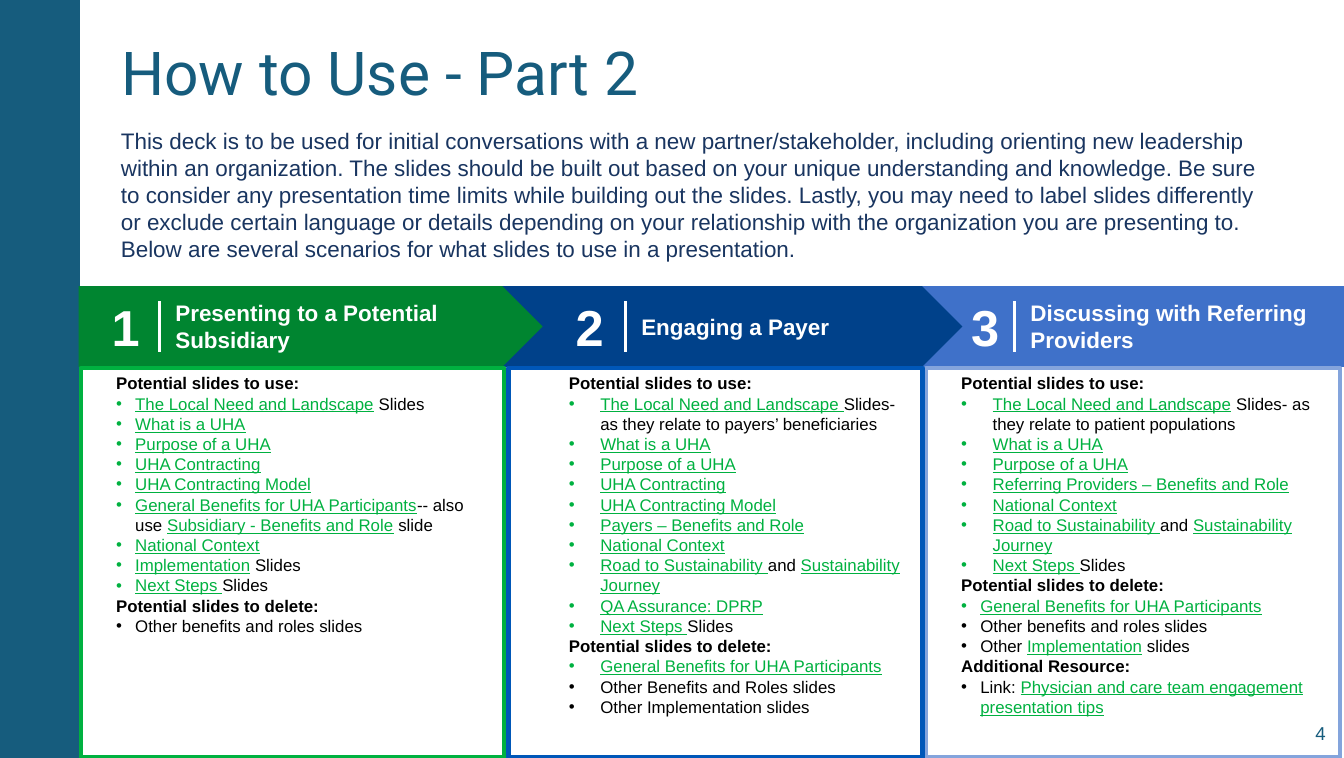
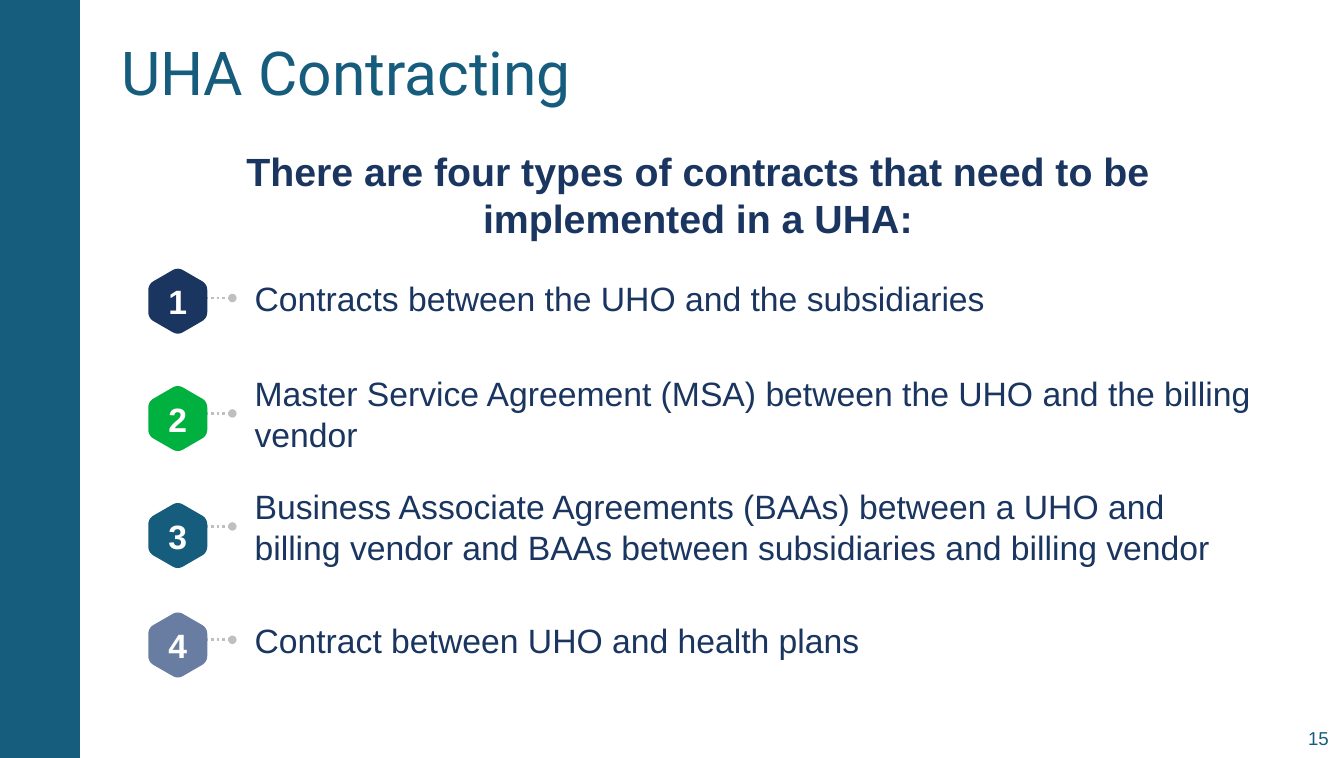
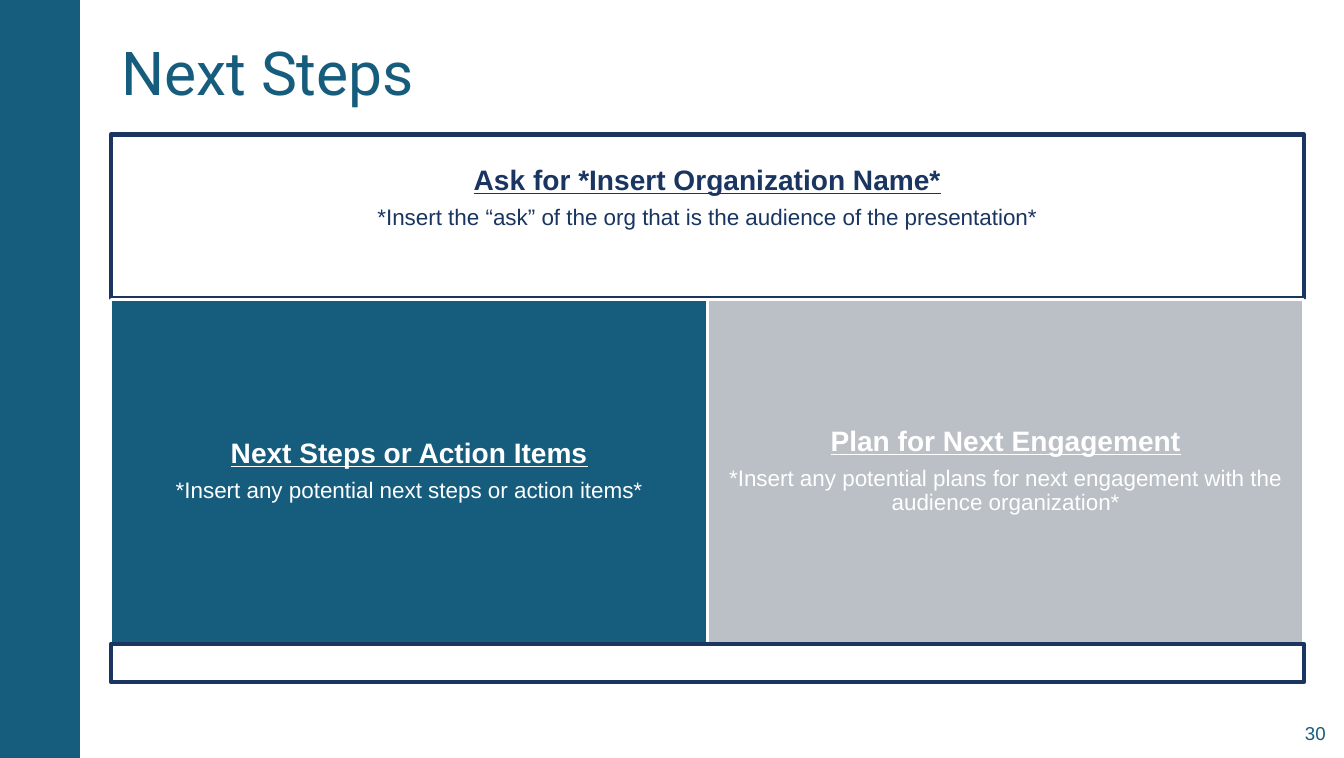
"""Build three slides of a partner briefing deck."""
import math
from dataclasses import dataclass

import pptx
import pptx.dml.color
import pptx.enum.dml
import pptx.enum.shapes
import pptx.enum.text
import pptx.oxml.ns
import pptx.util
from lxml import etree

Cm, Pt = pptx.util.Cm, pptx.util.Pt
Align = pptx.enum.text.PP_ALIGN
Anchor = pptx.enum.text.MSO_ANCHOR
Shape = pptx.enum.shapes.MSO_SHAPE
qn = pptx.oxml.ns.qn


@dataclass(frozen=True)
class Theme:
    font: str = "Arial"
    display: str = "Roboto"
    teal: str = "165C7D"
    navy: str = "193560"
    green: str = "00B140"
    forest: str = "008530"
    blue: str = "0057B8"
    deep: str = "00418A"
    sky: str = "3F71C9"
    pale: str = "84A4DC"
    slate: str = "687DA1"
    mist: str = "BAC0C5"
    dot: str = "BFBFBF"
    white: str = "FFFFFF"
    black: str = "000000"
    title: float = 43.1
    digit: int = 36
    lead: int = 28
    item: int = 24
    head: int = 20
    body: int = 16
    page: float = 13.3
    small: int = 12


T = Theme()


def rgb(code):
    return pptx.dml.color.RGBColor.from_string(code)


def put(thing, **values):
    for name, value in values.items():
        setattr(thing, name, value)


class Deck:
    def __init__(self):
        self.prs = pptx.Presentation()
        put(self.prs, slide_width=Cm(33.78), slide_height=Cm(19.05))
        self.layout = self.prs.slide_layouts[5]
        self.slide = None

    def start(self, title, page, left=30.45, top=17.91):
        first = self.slide is None
        self.slide = self.prs.slides.add_slide(self.layout)
        if first:
            band = self.shape(Shape.RECTANGLE, (0, 0, 2.01, 19.05), T.teal)
            self.layout.shapes.element.insert(2, band.element)
        head = self.slide.shapes.title
        put(head, left=Cm(2.79), top=Cm(0.71), width=Cm(29.29), height=Cm(2.16))
        put(head.text_frame, vertical_anchor=Anchor.MIDDLE,
            auto_size=pptx.enum.text.MSO_AUTO_SIZE.NONE)
        self.line(head, title, T.title, T.teal, name=T.display)
        self.text((left, top, 3.12, 1.02), page, T.page, T.teal, Align.RIGHT)

    def style(self, shape, fill=None, edge=None, width=3):
        shape.shadow.inherit = False
        if fill:
            shape.fill.solid()
            shape.fill.fore_color.rgb = rgb(fill)
        else:
            shape.fill.background()
        if edge:
            shape.line.color.rgb = rgb(edge)
            shape.line.width = Pt(width)
        else:
            shape.line.fill.background()
        return shape

    def shape(self, kind, at, fill=None, edge=None, width=3):
        made = self.slide.shapes.add_shape(kind, *map(Cm, at))
        return self.style(made, fill, edge, width)

    def frame(self, box, anchor=Anchor.MIDDLE, pad=None, foot=None):
        put(box.text_frame, word_wrap=True, vertical_anchor=anchor)
        if pad is not None:
            for side in ("left", "top", "right", "bottom"):
                setattr(box.text_frame, "margin_" + side, Cm(pad))
        if foot is not None:
            box.text_frame.margin_bottom = Cm(foot)
        return box

    def line(self, box, text, size, ink, align=Align.LEFT, space=None, **look):
        """Add a paragraph, with the parts between underscores as links."""
        para = box.text_frame.paragraphs[0]
        if para.runs:
            para = box.text_frame.add_paragraph()
        put(para, alignment=align, **(space or {}))
        for place, part in enumerate(text.split("_")):
            if not part:
                continue
            font = para.add_run()
            font.text = part
            font = font.font
            link = place % 2 == 1
            values = {"name": T.font, "size": Pt(size), "bold": False, "underline": link}
            put(font, **{**values, **look})
            font.color.rgb = rgb(T.green if link else ink)
        return para

    def text(self, at, text, size, ink, align=Align.LEFT,
             anchor=Anchor.MIDDLE, pad=None, **look):
        box = self.slide.shapes.add_textbox(*map(Cm, at))
        self.frame(box, anchor, pad)
        self.line(box, text, size, ink, align, **look)

    def indent(self, para, left, hang=0):
        props = para._p.get_or_add_pPr()
        props.set("marL", str(Cm(left + hang)))
        props.set("indent", str(-Cm(hang)))
        if hang:
            font = etree.SubElement(props, qn("a:buFont"))
            font.set("typeface", T.font)
            etree.SubElement(props, qn("a:buChar")).set("char", "•")

    def rule(self, start, end, ink, width, dots=False):
        kind = pptx.enum.shapes.MSO_CONNECTOR.STRAIGHT
        rule = self.slide.shapes.add_connector(kind, *map(Cm, start + end))
        rule.line.color.rgb = rgb(ink)
        rule.line.width = Pt(width)
        if dots:
            rule.line.dash_style = pptx.enum.dml.MSO_LINE.ROUND_DOT
            tail = etree.SubElement(rule.line._get_or_add_ln(), qn("a:tailEnd"))
            tail.set("type", "oval")
        etree.SubElement(rule.element.spPr, qn("a:effectLst"))

    def hexa(self, mid, high, digit, fill, reach=0.74, bend=0.25):
        """Draw a hexagon with round corners around a digit."""
        arm = (reach - bend) / math.cos(math.radians(30))
        dots = []
        for corner in range(-90, 270, 60):
            a = math.radians(corner)
            for turn in range(-30, 31, 10):
                b = math.radians(corner + turn)
                dots.append((Cm(mid + arm * math.cos(a) + bend * math.cos(b)),
                             Cm(high + arm * math.sin(a) + bend * math.sin(b))))
        form = self.slide.shapes.build_freeform(*dots[0])
        form.add_line_segments(dots[1:], close=True)
        made = self.frame(self.style(form.convert_to_shape(), fill), pad=0)
        self.line(made, digit, T.item, T.white, Align.CENTER, bold=True)

    def banner(self, kind, digit, label, fill, left, width, num, bar):
        top, high = 7.19, 2.03
        self.shape(kind, (left, top, width, high), fill)
        self.text((num, top, 1.5, high), digit, T.digit, T.white, Align.CENTER, bold=True)
        self.text((bar + 0.15, top, 8.1, high), label, T.body, T.white, bold=True)
        self.rule((bar, 7.57), (bar, 8.84), T.white, 2.25)

    def column(self, left, width, edge, inset, parts):
        box = self.shape(Shape.RECTANGLE, (left, 9.25, width, 9.79), edge=edge)
        self.frame(box, Anchor.TOP)
        for head, hang, lines in parts:
            self.indent(self.line(box, head, T.small, T.black, bold=True), inset)
            for text in lines:
                self.indent(self.line(box, text, T.small, T.black), inset, hang)

    def panel(self, at, head, text, ink, fill, edge, width, foot=0.2):
        box = self.shape(Shape.RECTANGLE, at, fill, edge, width)
        self.frame(box, pad=0.2, foot=foot)
        gap = {"line_spacing": 0.9, "space_after": Pt(7)}
        self.line(box, head, T.head, ink, Align.CENTER, gap, bold=True, underline=True)
        self.line(box, text, T.body, ink, Align.CENTER, gap)


USE, CUT = "Potential slides to use:", "Potential slides to delete:"
BASE = ["_What is a UHA_", "_Purpose of a UHA_"]
DEAL = ["_UHA Contracting_", "_UHA Contracting Model_"]
ROAD = ["_National Context_", "_Road to Sustainability _and _Sustainability Journey_"]
NEXT = "_Next Steps _Slides"
GAIN = "_General Benefits for UHA Participants_"
NEAR, WIDE = 0.48, 0.79

FIRST = [
    (USE, NEAR, ["_The Local Need and Landscape_ Slides", *BASE, *DEAL,
                 GAIN + "-- also use _Subsidiary - Benefits and Role_ slide",
                 ROAD[0], "_Implementation_ Slides", NEXT]),
    (CUT, NEAR, ["Other benefits and roles slides"]),
]
SECOND = [
    (USE, WIDE, ["_The Local Need and Landscape _Slides- as they relate to payers’ beneficiaries",
                 *BASE, *DEAL, "_Payers – Benefits and Role_", *ROAD,
                 "_QA Assurance: DPRP_", NEXT]),
    (CUT, WIDE, [GAIN, "Other Benefits and Roles slides", "Other Implementation slides"]),
]
THIRD = [
    (USE, WIDE, ["_The Local Need and Landscape_ Slides- as they relate to patient populations",
                 *BASE, "_Referring Providers – Benefits and Role_", *ROAD, NEXT]),
    (CUT, NEAR, [GAIN, "Other benefits and roles slides", "Other _Implementation_ slides"]),
    ("Additional Resource:", NEAR,
     ["Link: _Physician and care team engagement presentation tips_"]),
]
INTRO = (
    "This deck is to be used for initial conversations with a new partner/stakeholder, "
    "including orienting new leadership within an organization. The slides should be built "
    "out based on your unique understanding and knowledge. Be sure to consider any "
    "presentation time limits while building out the slides. Lastly, you may need to label "
    "slides differently or exclude certain language or details depending on your "
    "relationship with the organization you are presenting to. Below are several scenarios "
    "for what slides to use in a presentation."
)


def guide(deck):
    deck.start("How to Use - Part 2", "4")
    deck.text((2.79, 3.07, 29.29, 3.86), INTRO, T.body, T.navy, anchor=Anchor.TOP)
    plate = Shape.PENTAGON
    deck.banner(Shape.RECTANGLE, "3", "Discussing with Referring Providers",
                T.sky, 22.76, 11.02, 24.01, 25.5)
    deck.banner(plate, "2", "Engaging a Payer", T.deep, 12.12, 12.07, 14.07, 15.72)
    deck.banner(plate, "1", "Presenting to a Potential Subsidiary",
                T.forest, 1.98, 11.66, 2.41, 4.01)
    deck.column(23.27, 10.41, T.pale, 0.64, THIRD)
    deck.column(12.78, 10.41, T.blue, 1.27, SECOND)
    deck.column(2.03, 10.64, T.green, 0.64, FIRST)


def deals(deck):
    deck.start("UHA Contracting", "15", 30.53, 18.03)
    deck.text((3.38, 3.58, 28.32, 2.6),
              "There are four types of contracts that need to be implemented in a UHA:",
              T.lead, T.navy, Align.CENTER, Anchor.TOP, bold=True)
    rows = [
        (7.57, 7.49, T.navy, "Contracts between the UHO and the subsidiaries"),
        (10.52, 10.39, T.green,
         "Master Service Agreement (MSA) between the UHO and the billing vendor"),
        (13.46, 13.23, T.teal,
         "Business Associate Agreements (BAAs) between a UHO and billing vendor "
         "and BAAs between subsidiaries and billing vendor"),
        (16.21, 16.08, T.slate, "Contract between UHO and health plans"),
    ]
    for count, (high, mid, fill, text) in enumerate(rows, 1):
        deck.text((6.15, mid - 1.1, 25.65, 2.2), text, T.item, T.navy, pad=0.25)
        deck.rule((5.16, mid), (5.84, mid), T.dot, 2, dots=True)
        deck.hexa(4.47, high, str(count), fill)


def steps(deck):
    deck.start("Next Steps", "30")
    left, full, half = 2.79, 29.98, 14.99
    deck.panel((left, 3.38, full, 4.11), "Ask for *Insert Organization Name*",
               "*Insert the “ask” of the org that is the audience of the presentation*",
               T.navy, T.white, T.navy, 3, foot=1.1)
    pair = [
        ("Next Steps or Action Items",
         "*Insert any potential next steps or action items*", T.teal),
        ("Plan for Next Engagement",
         "*Insert any potential plans for next engagement with the audience organization*",
         T.mist),
    ]
    for count, (head, text, fill) in enumerate(pair):
        deck.panel((left + count * half, 7.52, half, 8.66), head, text,
                   T.white, fill, T.white, 2)
    deck.shape(Shape.RECTANGLE, (left, 16.18, full, 0.97), edge=T.navy)


def main():
    deck = Deck()
    for build in (guide, deals, steps):
        build(deck)
    deck.prs.save("out.pptx")


if __name__ == "__main__":
    main()
